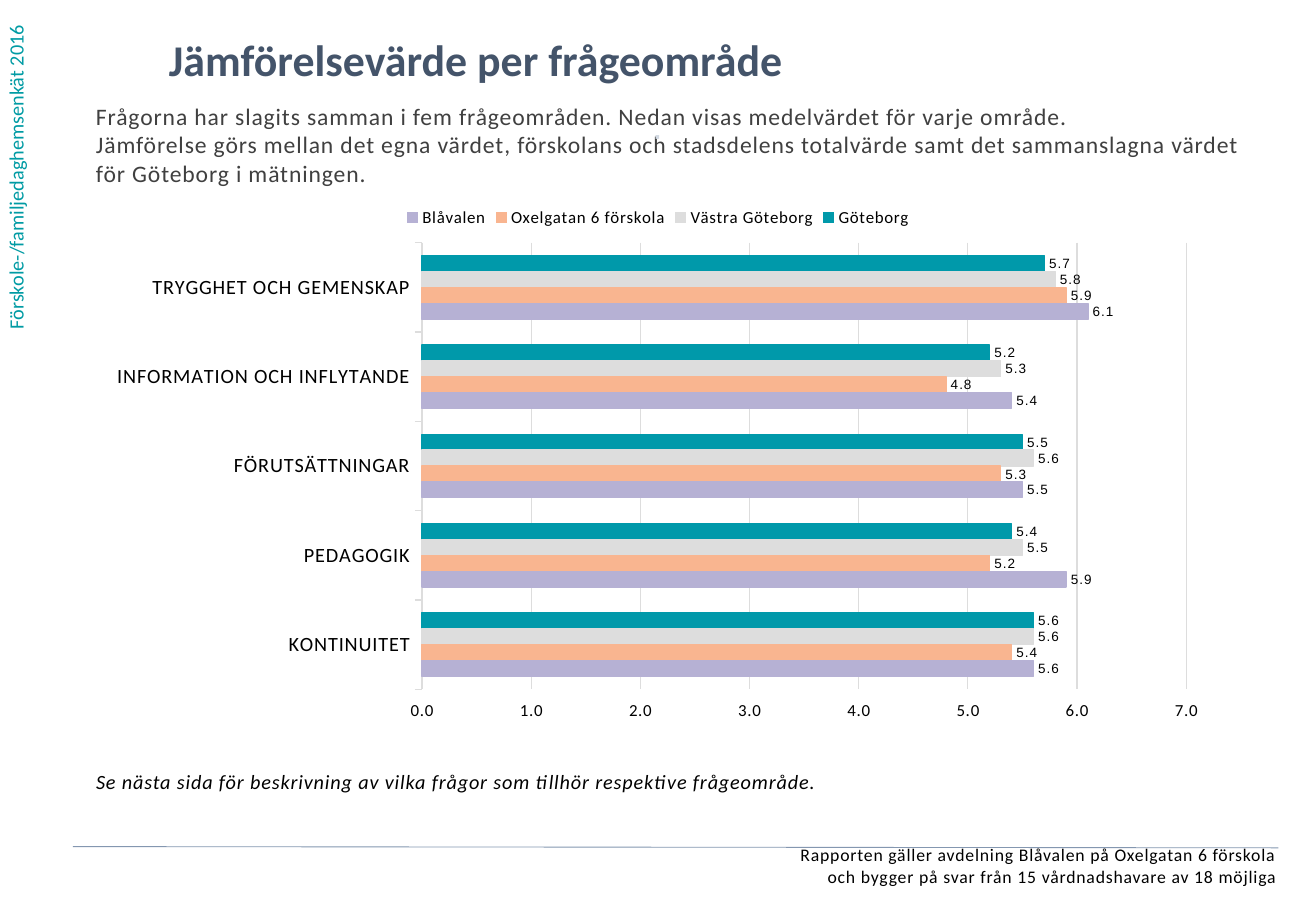
from lxml import etree
from pptx import Presentation
from pptx.chart.data import CategoryChartData
from pptx.dml.color import RGBColor
from pptx.enum.chart import XL_CHART_TYPE as ChartType
from pptx.enum.chart import XL_LABEL_POSITION as LabelPos
from pptx.enum.chart import XL_LEGEND_POSITION as LegendPos
from pptx.enum.chart import XL_TICK_LABEL_POSITION as TickLabelPos
from pptx.enum.chart import XL_TICK_MARK as Tick
from pptx.enum.shapes import MSO_CONNECTOR as Connector
from pptx.enum.text import MSO_ANCHOR as Anchor
from pptx.enum.text import PP_ALIGN as Align
from pptx.oxml.ns import qn
from pptx.util import Inches, Pt

FONT = "Calibri"
BLACK, GRID = "000000", "DDDDDD"
NUMBER_FORMAT = "0.0;0.0"
LETTER_SPACING = "50"  # hundredths of a point

AREAS = ["TRYGGHET OCH GEMENSKAP", "INFORMATION OCH INFLYTANDE",
         "FÖRUTSÄTTNINGAR", "PEDAGOGIK", "KONTINUITET"]
RESULTS = [
    ("Göteborg", "0099AA", (5.7, 5.2, 5.5, 5.4, 5.6)),
    ("Västra Göteborg", "DDDDDD", (5.8, 5.3, 5.6, 5.5, 5.6)),
    ("Oxelgatan 6 förskola", "F9B590", (5.9, 4.8, 5.3, 5.2, 5.4)),
    ("Blåvalen", "B6B1D4", (6.1, 5.4, 5.5, 5.9, 5.6)),
]


def color(hex_string):
    return RGBColor.from_string(hex_string)


def style_font(font, size, hex_color, name=FONT, bold=False, italic=False):
    font.name, font.size = name, Pt(size)
    font.bold, font.italic = bold, italic
    font.color.rgb = color(hex_color)


def space_letters(element, tag):
    for properties in element.iter(qn(tag)):
        properties.set("spc", LETTER_SPACING)


def fill_text(shape, text, size, hex_color, align=Align.LEFT, inset=0,
              bold=False, italic=False):
    frame = shape.text_frame
    frame.word_wrap = True
    frame.vertical_anchor = Anchor.TOP
    frame.margin_left = frame.margin_right = Inches(inset)
    frame.margin_top = frame.margin_bottom = Inches(inset / 2)
    frame.text = text
    for paragraph in frame.paragraphs:
        paragraph.alignment = align
        for run in paragraph.runs:
            style_font(run.font, size, hex_color, bold=bold, italic=italic)


def add_text(slide, box, text, size, hex_color, **options):
    shape = slide.shapes.add_textbox(*map(Inches, box))
    fill_text(shape, text, size, hex_color, **options)
    space_letters(shape.element, "a:rPr")


def add_title(slide, box, text):
    title = slide.shapes.title
    title.left, title.top, title.width, title.height = map(Inches, box)
    fill_text(title, text, 26, "44546A", bold=True)


def add_side_label(slide, box, text):
    label = slide.shapes.add_textbox(*map(Inches, box))
    fill_text(label, text, 12, "009BA4", inset=0.1)
    label.element.txBody.find(qn("a:bodyPr")).set("vert", "vert270")


def add_rule(slide, start, end):
    rule = slide.shapes.add_connector(
        Connector.STRAIGHT, *map(Inches, start + end))
    rule.line.color.rgb = color("8497B0")
    rule.line.width = Pt(0.5)
    etree.SubElement(rule.element.spPr, qn("a:effectLst"))


def place_plot(chart, x, y, w, h):
    plot_area = chart.element.find(".//" + qn("c:plotArea"))
    for old_layout in plot_area.findall(qn("c:layout")):
        plot_area.remove(old_layout)
    layout = etree.Element(qn("c:layout"))
    manual = etree.SubElement(layout, qn("c:manualLayout"))
    settings = [("layoutTarget", "inner"), ("xMode", "edge"),
                ("yMode", "edge"), ("x", x), ("y", y), ("w", w), ("h", h)]
    for tag, value in settings:
        etree.SubElement(manual, qn("c:" + tag)).set("val", str(value))
    plot_area.insert(0, layout)


def style_axes(chart):
    areas, scale = chart.category_axis, chart.value_axis
    areas.reverse_order = True
    areas.major_tick_mark = Tick.OUTSIDE
    style_font(areas.tick_labels.font, 12, BLACK)
    scale.minimum_scale, scale.maximum_scale, scale.major_unit = 0, 7, 1
    scale.major_tick_mark = Tick.OUTSIDE
    # The areas run downwards, so the high end is the bottom
    scale.tick_label_position = TickLabelPos.HIGH
    scale.tick_labels.number_format = NUMBER_FORMAT
    scale.tick_labels.number_format_is_linked = False
    style_font(scale.tick_labels.font, 10, BLACK)
    scale.format.line.fill.background()
    for line in (areas.format.line, scale.major_gridlines.format.line):
        line.color.rgb = color(GRID)
        line.width = Pt(0.75)


def style_series(series, hex_color):
    series.format.fill.solid()
    series.format.fill.fore_color.rgb = color(hex_color)
    series.format.line.color.rgb = color(hex_color)
    series.format.line.width = Pt(0.75)
    labels = series.data_labels
    labels.show_value = True
    labels.position = LabelPos.OUTSIDE_END
    labels.number_format = NUMBER_FORMAT
    labels.number_format_is_linked = False
    style_font(labels.font, 8, BLACK, name="Arial")


def add_comparison_chart(slide, box):
    data = CategoryChartData(number_format="0.0")
    data.categories = AREAS
    for name, _, values in RESULTS:
        data.add_series(name, values)
    chart = slide.shapes.add_chart(
        ChartType.BAR_CLUSTERED, *map(Inches, box), data).chart
    chart.has_title = False
    style_font(chart.font, 10, BLACK)
    style_axes(chart)

    # Bars and their value labels
    bars = chart.plots[0]
    bars.gap_width, bars.overlap = 162, 0
    bars.vary_by_categories = False
    for series, (_, hex_color, _) in zip(bars.series, RESULTS):
        style_series(series, hex_color)

    # Legend and plot position
    chart.has_legend = True
    chart.legend.position = LegendPos.TOP
    chart.legend.include_in_layout = False
    style_font(chart.legend.font, 10, BLACK)
    place_plot(chart, 0.29, 0.09, 0.68, 0.83)
    space_letters(chart.element, "a:defRPr")


def main():
    presentation = Presentation()
    presentation.slide_width = Inches(10.83)
    presentation.slide_height = Inches(7.5)
    slide = presentation.slides.add_slide(presentation.slide_layouts[5])

    # Heading and introduction
    add_side_label(slide, (-0.02, 0, 0.4, 2.81),
                   "Förskole-/familjedaghemsenkät 2016")
    add_title(slide, (1.39, 0.27, 8.34, 0.57),
              "Jämförelsevärde per frågeområde")
    add_text(slide, (0.79, 0.84, 9.46, 0.76),
             "Frågorna har slagits samman i fem frågeområden. "
             "Nedan visas medelvärdet för varje område.\v"
             "Jämförelse görs mellan det egna värdet, förskolans och "
             "stadsdelens totalvärde samt det sammanslagna värdet "
             "för Göteborg i mätningen.", 14, "404040")
    add_text(slide, (3.87, 1.02, 3.08, 0.39), "⋅", 12, "D2D9E2",
             align=Align.CENTER, bold=True)

    # Comparison and note
    add_comparison_chart(slide, (0.79, 1.6, 9.25, 4.43))
    add_text(slide, (0.79, 6.33, 9.25, 0.3),
             "Se nästa sida för beskrivning av vilka frågor som tillhör "
             "respektive frågeområde.", 12, BLACK, italic=True)

    # Footer
    add_rule(slide, (0.6, 6.97), (10.52, 6.98))
    add_text(slide, (0.11, 6.95, 10.4, 0.43),
             "Rapporten gäller avdelning Blåvalen på Oxelgatan 6 förskola\v"
             "och bygger på svar från 15 vårdnadshavare av 18 möjliga",
             10.5, BLACK, align=Align.RIGHT)

    presentation.save("out.pptx")


if __name__ == "__main__":
    main()
